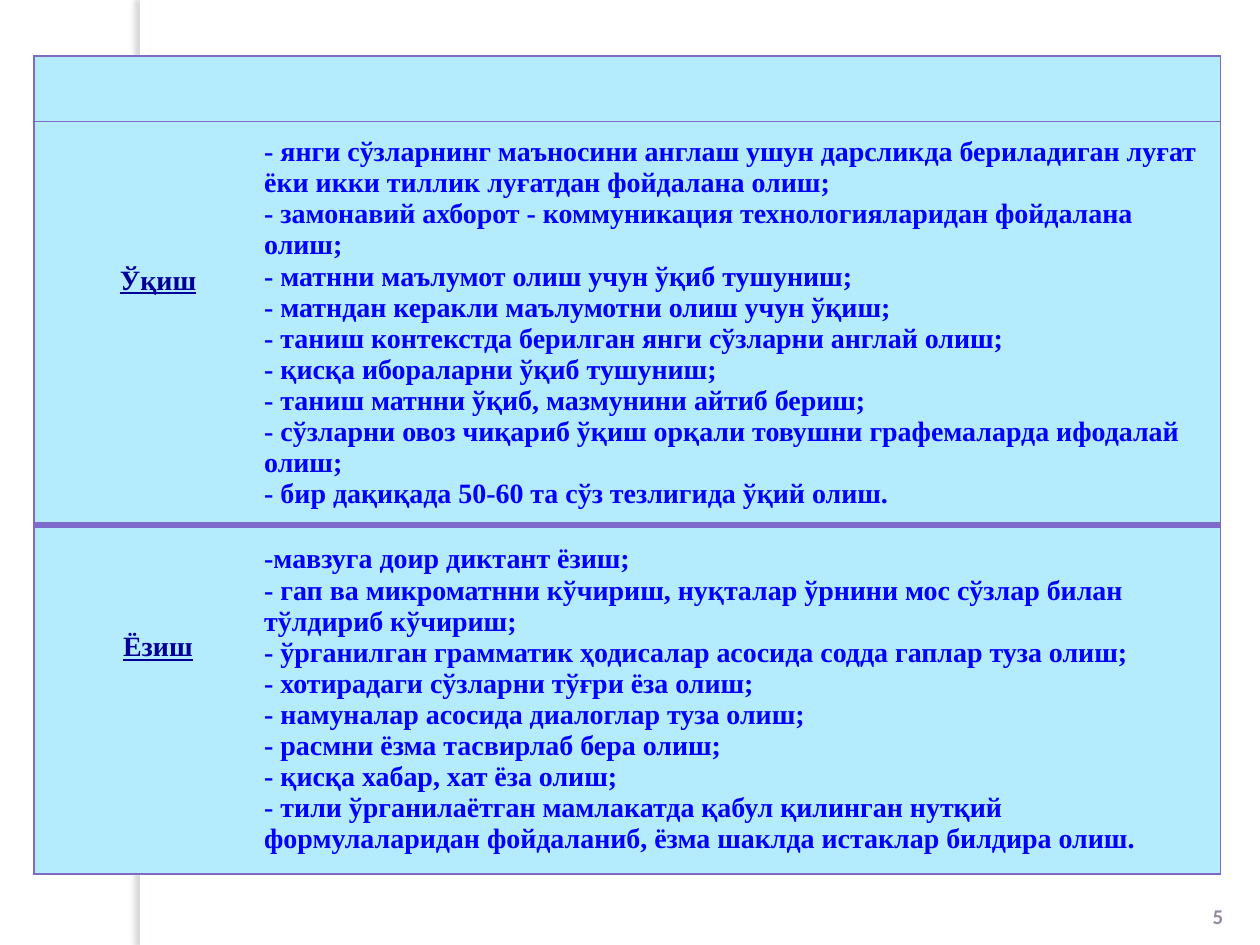
import pptx
import pptx.dml.color
import pptx.enum.shapes
import pptx.enum.text
import pptx.oxml
import pptx.oxml.ns
import pptx.util
from dataclasses import dataclass

Pt = pptx.util.Pt
ALIGN = pptx.enum.text.PP_ALIGN
ANCHOR = pptx.enum.text.MSO_ANCHOR


def rgb(value):
    return pptx.dml.color.RGBColor.from_string(value)


def xml(tag, body):
    namespace = pptx.oxml.ns.nsdecls("a")
    return pptx.oxml.parse_xml(body.replace(f"<{tag}", f"<{tag} {namespace}", 1))


def apply(target, values):
    for name, value in values.items():
        setattr(target, name, value)


@dataclass
class Theme:
    paper: str = "FFFFFF"
    cell: str = "B4ECFE"
    border: str = "7E6BC9"
    label: str = "000099"
    body: str = "0000FF"
    number: str = "948AA0"
    shadow: str = "646068"
    text_font: str = "Times New Roman"
    number_font: str = "Calibri"
    text_size: int = 16
    number_size: int = 12


class SlideBuilder:
    def __init__(self, slide, theme):
        self.slide = slide
        self.theme = theme

    def fill_text(self, frame, lines, color, font, alignment=ALIGN.LEFT):
        """Fill a text frame, one paragraph per line."""
        for index, line in enumerate(lines):
            paragraph = frame.paragraphs[0] if index == 0 else frame.add_paragraph()
            paragraph.alignment = alignment
            run = paragraph.add_run()
            run.text = line
            apply(run.font, font)
            run.font.color.rgb = rgb(color)

    def strip_band(self, left, top, width, height):
        """White band with a soft shadow on its left side."""
        shape = self.slide.shapes.add_shape(
            pptx.enum.shapes.MSO_SHAPE.RECTANGLE, Pt(left), Pt(top), Pt(width), Pt(height))
        shape.fill.solid()
        shape.fill.fore_color.rgb = rgb(self.theme.paper)
        shape.line.fill.background()
        shape.shadow.inherit = False
        effects = shape._element.spPr.find(pptx.oxml.ns.qn("a:effectLst"))
        effects.append(xml("a:outerShdw", (
            f'<a:outerShdw blurRad="{Pt(3)}" dist="{Pt(3)}" dir="10800000">'
            f'<a:srgbClr val="{self.theme.shadow}"><a:alpha val="25000"/></a:srgbClr>'
            '</a:outerShdw>')))

    def page_number(self, text, left, top, width, height):
        box = self.slide.shapes.add_textbox(Pt(left), Pt(top), Pt(width), Pt(height))
        apply(box.text_frame, {"word_wrap": True, "vertical_anchor": ANCHOR.BOTTOM})
        font = {"name": self.theme.number_font, "size": Pt(self.theme.number_size), "bold": True}
        self.fill_text(box.text_frame, [text], self.theme.number, font, ALIGN.CENTER)

    def style_cell(self, cell, **widths):
        """Set the four edges (0 hides one), then the fill."""
        properties = cell._tc.get_or_add_tcPr()
        for side in "LRTB":
            width = widths.get(side, 1)
            paint = (f'<a:solidFill><a:srgbClr val="{self.theme.border}"/></a:solidFill>'
                     if width else "<a:noFill/>")
            tag = f"a:ln{side}"
            properties.append(xml(tag, f'<{tag} w="{Pt(width)}">{paint}</{tag}>'))
        cell.fill.solid()
        cell.fill.fore_color.rgb = rgb(self.theme.cell)

    def skills_table(self, left, top, columns, rows, skills):
        table = self.slide.shapes.add_table(
            len(rows), len(columns), Pt(left), Pt(top), Pt(sum(columns)), Pt(sum(rows))).table
        apply(table, {"first_row": False, "horz_banding": False})
        for column, width in zip(table.columns, columns):
            column.width = Pt(width)
        for row, height in zip(table.rows, rows):
            row.height = Pt(height)

        # Empty heading row
        for cell in table.rows[0].cells:
            self.style_cell(cell)
        table.cell(0, 0).merge(table.cell(0, 1))

        # One row per skill; a thick rule parts the skills
        font = {"name": self.theme.text_font, "size": Pt(self.theme.text_size), "bold": True}
        margins = {"margin_left": Pt(1.5), "margin_right": Pt(1.5),
                   "margin_top": 0, "margin_bottom": 0}
        for index, (name, drop, goals) in enumerate(skills, start=1):
            rules = {"T": 1 if index == 1 else 4, "B": 1 if index == len(skills) else 4}
            label, body = table.cell(index, 0), table.cell(index, 1)
            apply(label, {**margins, "margin_left": Pt(13), "margin_top": Pt(drop),
                          "vertical_anchor": ANCHOR.TOP})
            apply(body, {**margins, "vertical_anchor": ANCHOR.MIDDLE})
            self.fill_text(label.text_frame, [name], self.theme.label,
                           {**font, "underline": True}, ALIGN.CENTER)
            self.fill_text(body.text_frame, goals, self.theme.body, font)
            self.style_cell(label, R=0, **rules)
            self.style_cell(body, L=0, **rules)


# Skill name, distance of the name from the row top, goals
SKILLS = [
    ("Ўқиш", 82, [
        "- янги сўзларнинг маъносини англаш ушун дарсликда бериладиган луғат ёки икки тиллик луғатдан фойдалана олиш;",
        "- замонавий ахборот - коммуникация технологияларидан фойдалана олиш;",
        "- матнни маълумот олиш учун ўқиб тушуниш;",
        "- матндан керакли маълумотни олиш учун ўқиш;",
        "- таниш контекстда берилган янги сўзларни англай олиш;",
        "- қисқа ибораларни ўқиб тушуниш;",
        "- таниш матнни ўқиб, мазмунини айтиб бериш;",
        "- сўзларни овоз чиқариб ўқиш орқали товушни графемаларда ифодалай олиш;",
        "- бир дақиқада 50-60 та сўз тезлигида ўқий олиш.",
    ]),
    ("Ёзиш", 61, [
        "-мавзуга доир диктант ёзиш;",
        "- гап ва микроматнни кўчириш, нуқталар ўрнини мос сўзлар билан тўлдириб кўчириш;",
        "- ўрганилган грамматик ҳодисалар асосида содда гаплар туза олиш;",
        "- хотирадаги сўзларни тўғри ёза олиш;",
        "- намуналар асосида диалоглар туза олиш;",
        "- расмни ёзма тасвирлаб бера олиш;",
        "- қисқа хабар, хат ёза олиш;",
        "- тили ўрганилаётган мамлакатда қабул қилинган нутқий формулаларидан фойдаланиб, ёзма шаклда истаклар билдира олиш.",
    ]),
]


def main():
    presentation = pptx.Presentation()
    apply(presentation, {"slide_width": Pt(720), "slide_height": Pt(540)})
    slide = presentation.slides.add_slide(presentation.slide_layouts[6])
    builder = SlideBuilder(slide, Theme())

    # Side band, page number, table
    builder.strip_band(80, 0, 6, 540)
    builder.page_number("5", 678, 497, 36, 37.5)
    builder.skills_table(19.5, 32, [130, 548], [37.5, 230.5, 199.5], SKILLS)

    presentation.save("out.pptx")


if __name__ == "__main__":
    main()
